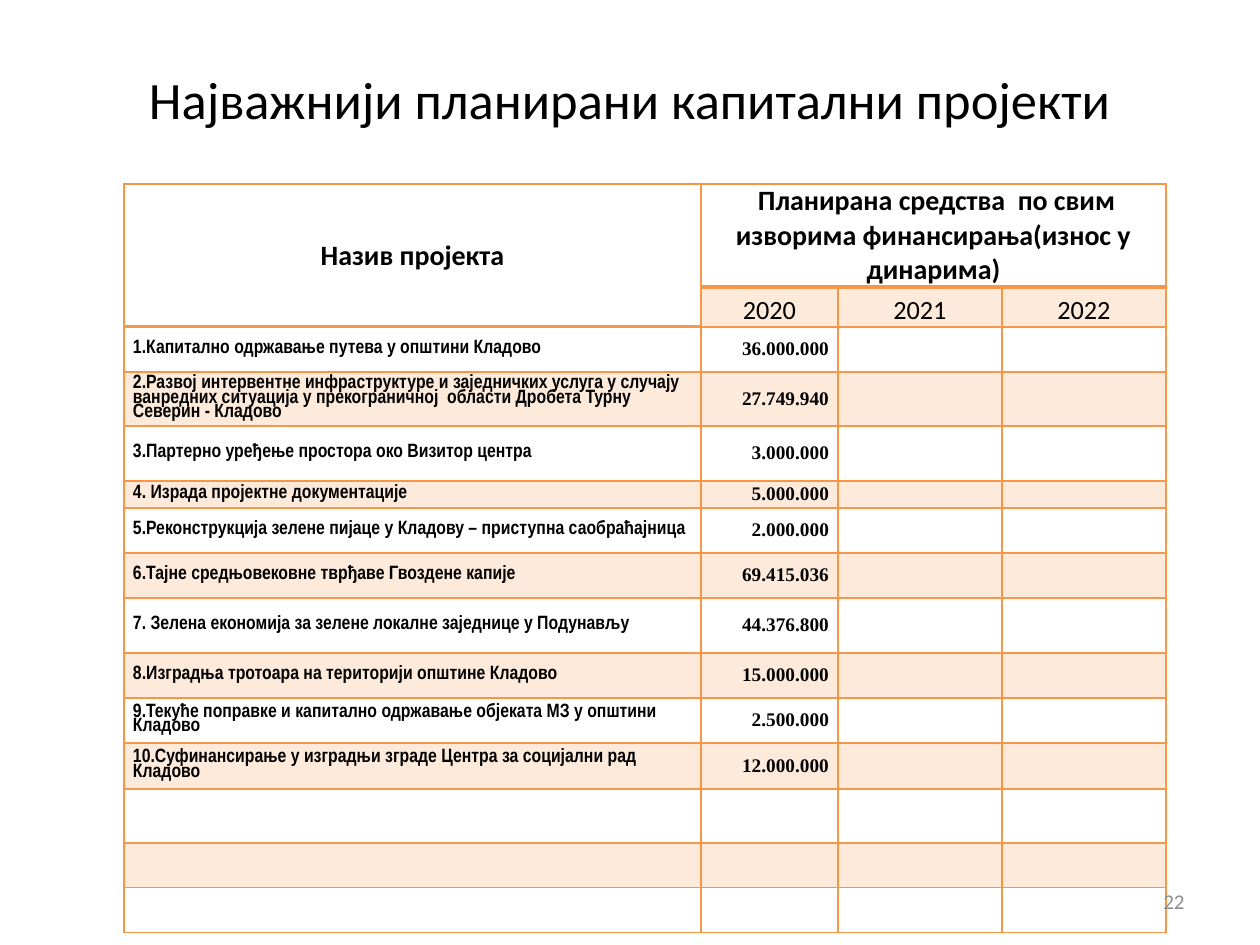
"""Builds the slide listing the most important planned capital projects."""
from dataclasses import dataclass

from lxml import etree
from pptx import Presentation
from pptx import util as u
from pptx.dml.color import RGBColor
from pptx.enum import text
from pptx.oxml.ns import qn

PX_PER_INCH = 126
LEFT, CENTER, RIGHT = text.PP_ALIGN.LEFT, text.PP_ALIGN.CENTER, text.PP_ALIGN.RIGHT
MIDDLE, BOTTOM = text.MSO_ANCHOR.MIDDLE, text.MSO_ANCHOR.BOTTOM

PROJECTS = [
    ("1.Капитално одржавање путева у општини Кладово", "36.000.000"),
    ("2.Развој интервентне инфраструктуре и заједничких услуга у случају "
     "ванредних ситуација у прекограничној  области Дробета Турну Северин - Кладово", "27.749.940"),
    ("3.Партерно уређење простора око Визитор центра", "3.000.000"),
    ("4. Израда пројектне документације", "5.000.000"),
    ("5.Реконструкција зелене пијаце у Кладову – приступна саобраћајница", "2.000.000"),
    ("6.Тајне средњовековне тврђаве Гвоздене капије", "69.415.036"),
    ("7. Зелена економија за зелене локалне заједнице у Подунављу", "44.376.800"),
    ("8.Изградња тротоара на територији општине Кладово", "15.000.000"),
    ("9.Текуће поправке и капитално одржавање објеката МЗ у општини Кладово", "2.500.000"),
    ("10.Суфинансирање у изградњи зграде Центра за социјални рад Кладово", "12.000.000"),
]
YEARS = ("2020", "2021", "2022")
COLUMN_WIDTHS = (577, 137, 164, 164)
ROW_HEIGHTS = (103, 40, 45, 54, 55, 27, 45, 45, 55, 45, 45, 46, 54, 45, 45)
HEADER_ROWS = 2


@dataclass(frozen=True)
class TextStyle:
    """Font and placement of one kind of text."""
    font: str
    size: int
    align: int
    bold: bool = False
    color: str = "000000"
    anchor: int = MIDDLE
    spacing: float = 1.0


@dataclass(frozen=True)
class Theme:
    """Colours and type of the slide."""
    accent: str = "F79646"
    band_alpha: int = 20
    title: TextStyle = TextStyle("Calibri", 30, CENTER)
    header: TextStyle = TextStyle("Calibri", 16, CENTER, bold=True)
    group: TextStyle = TextStyle("Calibri", 16, CENTER, bold=True, anchor=BOTTOM)
    year: TextStyle = TextStyle("Calibri", 15, CENTER, anchor=BOTTOM)
    name: TextStyle = TextStyle("Arial Narrow", 11, LEFT, bold=True, spacing=0.8)
    amount: TextStyle = TextStyle("Times New Roman", 11, RIGHT, bold=True)
    number: TextStyle = TextStyle("Calibri", 12, RIGHT, color="8C8C8C")


def px(length):
    """Turn pixels into EMU."""
    return u.Inches(length / PX_PER_INCH)


class SlideBuilder:
    """Holds the theme and the current slide."""

    def __init__(self, slide, theme):
        self.slide = slide
        self.theme = theme

    def set_text(self, paragraph, wording, style):
        """Fill one paragraph in the given style."""
        paragraph.text = wording
        paragraph.alignment = style.align
        paragraph.line_spacing = style.spacing
        font = paragraph.font
        font.name, font.size, font.bold = style.font, u.Pt(style.size), style.bold
        font.color.rgb = RGBColor.from_string(style.color)
        if not wording:
            etree.SubElement(paragraph._p, qn("a:endParaRPr"), sz=str(style.size * 100))

    def title(self, wording, left, top, width, height):
        """Place and fill the title placeholder."""
        shape = self.slide.shapes.title
        shape.left, shape.top, shape.width, shape.height = map(px, (left, top, width, height))
        shape.text_frame.vertical_anchor = self.theme.title.anchor
        self.set_text(shape.text_frame.paragraphs[0], wording, self.theme.title)

    def text_box(self, wording, style, left, top, width, height):
        """Add a wrapped text box."""
        frame = self.slide.shapes.add_textbox(*map(px, (left, top, width, height))).text_frame
        frame.word_wrap = True
        frame.vertical_anchor = style.anchor
        self.set_text(frame.paragraphs[0], wording, style)

    def table(self, left, top, widths, heights):
        """Add a plain table with the given columns and rows."""
        frame = self.slide.shapes.add_table(
            len(heights), len(widths), px(left), px(top), px(sum(widths)), px(sum(heights)))
        table = frame.table
        table.first_row = table.horz_banding = False
        for column, width in zip(table.columns, widths):
            column.width = px(width)
        for row, height in zip(table.rows, heights):
            row.height = px(height)
        return table

    def cell(self, cell, wording, style, banded=False, bottom=1):
        """Fill, border and label one cell."""
        cell.margin_left = cell.margin_right = px(9)
        cell.margin_top = cell.margin_bottom = 0
        cell.vertical_anchor = style.anchor
        properties = cell._tc.get_or_add_tcPr()
        for side, points in (("L", 1), ("R", 1), ("T", 1), ("B", bottom)):
            line = etree.SubElement(properties, qn(f"a:ln{side}"), w=str(u.Pt(points)))
            solid = etree.SubElement(line, qn("a:solidFill"))
            etree.SubElement(solid, qn("a:srgbClr"), val=self.theme.accent)
        if banded:
            cell.fill.solid()
            cell.fill.fore_color.rgb = RGBColor.from_string(self.theme.accent)
            color = properties.find(qn("a:solidFill")).find(qn("a:srgbClr"))
            etree.SubElement(color, qn("a:alpha"), val=str(self.theme.band_alpha * 1000))
        else:
            cell.fill.background()
        self.set_text(cell.text_frame.paragraphs[0], wording, style)


def add_projects(builder):
    """Add the table of projects and planned funds."""
    theme = builder.theme
    table = builder.table(124, 184, COLUMN_WIDTHS, ROW_HEIGHTS)
    table.cell(0, 0).merge(table.cell(1, 0))
    table.cell(0, 1).merge(table.cell(0, 3))
    builder.cell(table.cell(0, 0), "Назив пројекта", theme.header, bottom=2)
    builder.cell(table.cell(1, 0), "", theme.header, bottom=2)
    funds = " Планирана средства  по свим изворима финансирања(износ у динарима)"
    for column, year in enumerate(YEARS, start=1):
        builder.cell(table.cell(0, column), funds if column == 1 else "", theme.group, bottom=2)
        builder.cell(table.cell(1, column), year, theme.year, banded=True)
    for row in range(HEADER_ROWS, len(ROW_HEIGHTS)):
        index = row - HEADER_ROWS
        name, amount = PROJECTS[index] if index < len(PROJECTS) else ("", "")
        for column, wording in enumerate((name, amount, "", "")):
            style = theme.amount if column else theme.name
            builder.cell(table.cell(row, column), wording, style, banded=index % 2 == 1)


def main():
    """Build and save the presentation."""
    presentation = Presentation()
    presentation.slide_width, presentation.slide_height = px(1260), px(945)
    slide = presentation.slides.add_slide(presentation.slide_layouts[5])
    builder = SlideBuilder(slide, Theme())
    add_projects(builder)
    builder.text_box("22", builder.theme.number, 903, 876, 294, 50)
    builder.title("Најважнији планирани капитални пројекти", 63, 38, 1134, 121)
    presentation.save("out.pptx")


if __name__ == "__main__":
    main()
